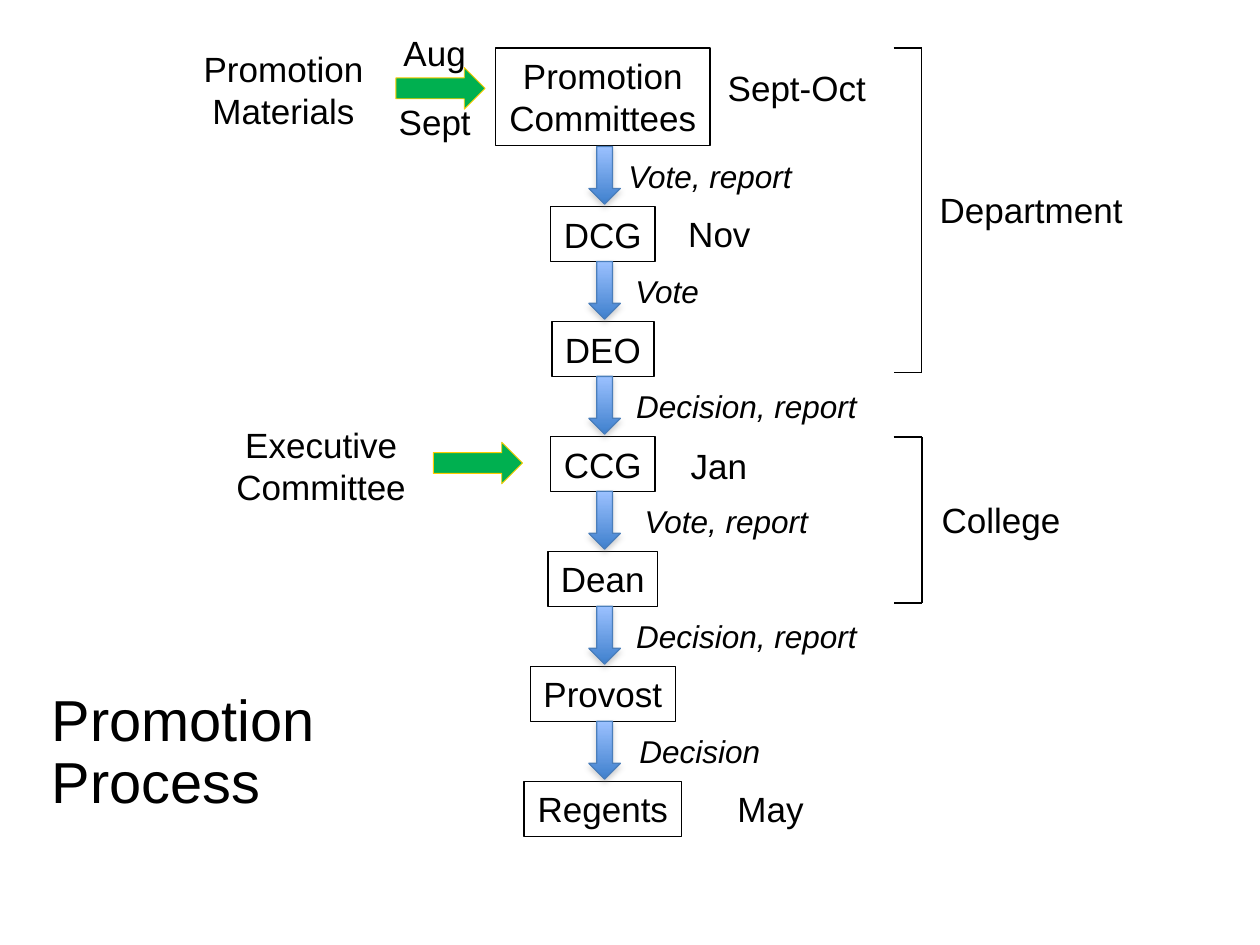
"""Build the promotion process flow chart slide."""
from lxml.etree import SubElement
from pptx import Presentation
from pptx.dml.color import RGBColor
from pptx.enum.shapes import MSO_CONNECTOR, MSO_SHAPE
from pptx.enum.text import MSO_ANCHOR, MSO_AUTO_SIZE, PP_ALIGN
from pptx.oxml.ns import qn
from pptx.util import Pt

BLACK = RGBColor(0x00, 0x00, 0x00)
GREEN = RGBColor(0x00, 0xB0, 0x50)
GOLD = RGBColor(0xFF, 0xCD, 0x00)
LIGHT_BLUE = RGBColor(0x9B, 0xC1, 0xFF)
DEEP_BLUE = RGBColor(0x3F, 0x80, 0xCD)
EDGE_BLUE = RGBColor(0x4A, 0x7E, 0xBB)
SHADOW_GREY = RGBColor(0x80, 0x80, 0x80)

CENTER = 344.5
PITCH = 65.7
STEP_TOP = 118
ARROW_TOP = 83.7
NOTE_TOP = 86.4
ONE_LINE = 31.5
TWO_LINES = 55.7

STEPS = [("DCG", 59.8), ("DEO", 58.3), ("CCG", 59.8),
         ("Dean", 62.6), ("Provost", 82.8), ("Regents", 90)]
NOTES = [("Vote, report", 351.4, 108.7), ("Vote", 355.7, 51.1),
         ("Decision, report", 355.7, 141.8), ("Vote, report", 360.7, 108.7),
         ("Decision, report", 355.7, 141.8), ("Decision", 357.8, 84.2)]
LABELS = [("Promotion\nMaterials", 108.7, 23.8, 106.6, TWO_LINES),
          ("Executive\nCommittee", 127.4, 238.3, 112.3, TWO_LINES),
          ("Aug", 223.2, 14.6, 50.4, ONE_LINE),
          ("Sept", 220.3, 53.6, 56.2, ONE_LINE),
          ("Sept-Oct", 408.2, 34.6, 94.3, ONE_LINE),
          ("Nov", 385.9, 118, 50.4, ONE_LINE),
          ("Jan", 387.4, 250.6, 46.8, ONE_LINE),
          ("May", 414, 446.4, 52.6, ONE_LINE),
          ("Department", 529.2, 104.4, 120.2, ONE_LINE),
          ("College", 530.6, 281.5, 82.8, ONE_LINE)]


class FlowSlide:
    """Hold the text style and the slide being drawn."""

    def __init__(self, slide, font_name="Arial"):
        self.slide = slide
        self.shapes = slide.shapes
        self.font_name = font_name

    def format_text(self, frame, text, size, alignment, italic=None):
        """Write the text and format every run."""
        frame.text = text
        for paragraph in frame.paragraphs:
            paragraph.alignment = alignment
            for run in paragraph.runs:
                run.font.name = self.font_name
                run.font.size = Pt(size)
                run.font.italic = italic
                run.font.color.rgb = BLACK

    def fit_text(self, frame, text, size, italic=None):
        """Centre unwrapped text in a frame that grows with it."""
        self.format_text(frame, text, size, PP_ALIGN.CENTER, italic)
        frame.word_wrap = False
        frame.auto_size = MSO_AUTO_SIZE.SHAPE_TO_FIT_TEXT

    def title(self, text, left, top, width, height):
        """Place and format the slide title."""
        title = self.shapes.title
        title.left, title.top = Pt(left), Pt(top)
        title.width, title.height = Pt(width), Pt(height)
        frame = title.text_frame
        self.format_text(frame, text, 33, PP_ALIGN.LEFT)
        frame.vertical_anchor = MSO_ANCHOR.BOTTOM
        frame.word_wrap = True
        frame.auto_size = MSO_AUTO_SIZE.NONE
        for paragraph in frame.paragraphs:
            paragraph.line_spacing = 0.9

    def label(self, text, left, top, width, height, size=20, italic=None):
        """Add free-standing text."""
        box = self.shapes.add_textbox(Pt(left), Pt(top), Pt(width), Pt(height))
        self.fit_text(box.text_frame, text, size, italic)

    def preset(self, kind, left, top, width, height, line_color, line_width):
        """Add a preset shape with an outline and no shadow."""
        shape = self.shapes.add_shape(kind, Pt(left), Pt(top), Pt(width), Pt(height))
        shape.shadow.inherit = False
        shape.line.color.rgb = line_color
        shape.line.width = Pt(line_width)
        return shape

    def step(self, text, top, width, height=ONE_LINE):
        """Add an outlined step on the centre line."""
        shape = self.preset(MSO_SHAPE.RECTANGLE, CENTER - width / 2, top,
                            width, height, BLACK, 0.75)
        shape.fill.background()
        self.fit_text(shape.text_frame, text, 20)

    def down_arrow(self, top):
        """Add a shaded arrow between two steps."""
        shape = self.preset(MSO_SHAPE.DOWN_ARROW, CENTER - 8, top, 18, 33, EDGE_BLUE, 0.75)
        shape.fill.gradient()
        shape.fill.gradient_angle = 270
        for stop, color in zip(shape.fill.gradient_stops, (LIGHT_BLUE, DEEP_BLUE)):
            stop.color.rgb = color
        effects = shape.element.spPr.find(qn("a:effectLst"))
        shadow = SubElement(effects, qn("a:outerShdw"), blurRad=str(Pt(3.1)),
                            dist=str(Pt(1.8)), dir="5400000", rotWithShape="0")
        color = SubElement(shadow, qn("a:srgbClr"), val=str(SHADOW_GREY))
        SubElement(color, qn("a:alpha"), val="35000")

    def input_arrow(self, left, top):
        """Add a green arrow pointing at a step."""
        shape = self.preset(MSO_SHAPE.RIGHT_ARROW, left, top, 51, 23.8, GOLD, 0.5)
        shape.fill.solid()
        shape.fill.fore_color.rgb = GREEN

    def bracket(self, left, right, top, bottom):
        """Add a grouped bracket that opens to the left."""
        group = self.shapes.add_group_shape()
        corners = [(left, top), (right, top), (right, bottom), (left, bottom)]
        for start, end in zip(corners, corners[1:]):
            line = group.shapes.add_connector(
                MSO_CONNECTOR.STRAIGHT, *(Pt(value) for value in start + end))
            line.line.color.rgb = BLACK
            line.line.width = Pt(1)
            SubElement(line.element.spPr, qn("a:effectLst"))


def main():
    """Draw the slide and save it."""
    presentation = Presentation()
    presentation.slide_width, presentation.slide_height = Pt(720), Pt(540)
    flow = FlowSlide(presentation.slides.add_slide(presentation.slide_layouts[5]))

    flow.title("Promotion\nProcess", 22.3, 426.2, 229.7, 43.9)
    flow.step("Promotion\nCommittees", 27.4, 122.4, TWO_LINES)
    for index, (text, width) in enumerate(STEPS):
        flow.step(text, STEP_TOP + index * PITCH, width)
    for index, (text, left, width) in enumerate(NOTES):
        flow.down_arrow(ARROW_TOP + index * PITCH)
        flow.label(text, left, NOTE_TOP + index * PITCH, width, 29, 18, True)
    flow.bracket(510.7, 526.6, 27.4, 212.8)
    flow.bracket(510.7, 526.8, 249.6, 344.8)
    flow.input_arrow(226.2, 38.6)
    flow.input_arrow(247.6, 252.7)
    for label in LABELS:
        flow.label(*label)

    presentation.save("out.pptx")


if __name__ == "__main__":
    main()
